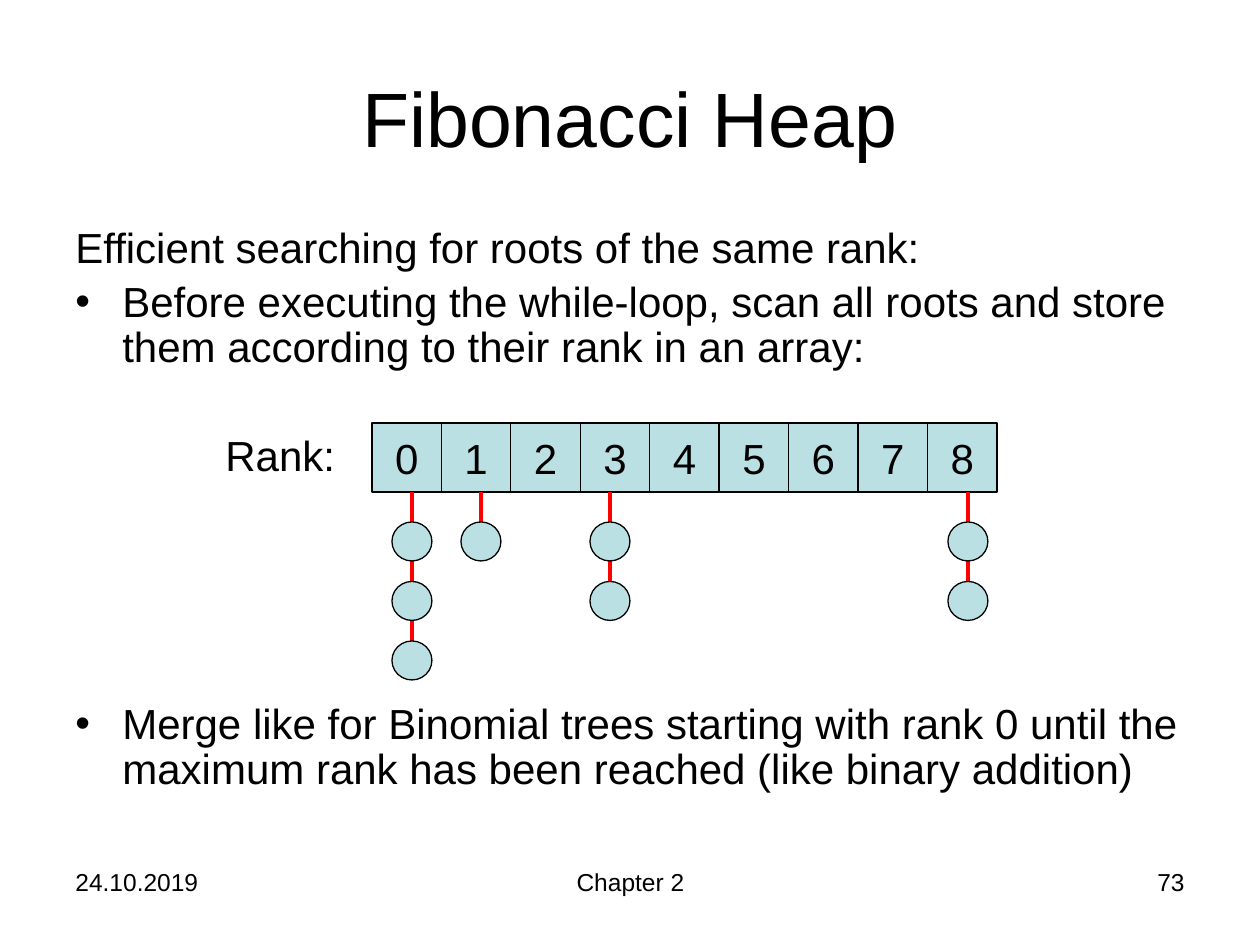
from pptx import Presentation
from pptx.dml.color import RGBColor
from pptx.enum.shapes import MSO_CONNECTOR, MSO_SHAPE
from pptx.enum.text import MSO_ANCHOR, PP_ALIGN
from pptx.oxml.ns import qn
from pptx.util import Pt
from lxml.etree import SubElement

BLACK = RGBColor(0x00, 0x00, 0x00)
TEAL = RGBColor(0xBB, 0xE0, 0xE3)
RED = RGBColor(0xFF, 0x00, 0x00)

TITLE = "Fibonacci Heap"
BODY = [
    ("Efficient searching for roots of the same rank:", False, 5),
    ("Before executing the while-loop, scan all roots and store them "
     "according to their rank in an array:", True, 5),
    ("Merge like for Binomial trees starting with rank 0 until the maximum "
     "rank has been reached (like binary addition)", True, 189),
]
FOOTER = [
    ("24.10.2019", 63, 294, PP_ALIGN.LEFT),
    ("Chapter 2", 431, 399, PP_ALIGN.CENTER),
    ("73", 903, 294, PP_ALIGN.RIGHT),
]
RANKS = range(9)
ROOTS = [(412, 3), (481, 1), (610, 2), (968, 2)]

ARRAY_LEFT, ARRAY_TOP, ARRAY_WIDTH, CELL_HEIGHT = 372, 423, 625, 69
NODE_TOP, NODE_W, NODE_H, TWO_NODE_STEPS = 522, 40, 39, 119
INDENT = 47


def px(n):
    return round(n * 914400 / 126)


def add_run(p, text, size):
    r = p.add_run()
    r.text = text
    r.font.name, r.font.size, r.font.color.rgb = "Arial", Pt(size), BLACK


def add_text(s, text, box, size, align=PP_ALIGN.LEFT, anchor=MSO_ANCHOR.TOP, wrap=True):
    tf = s.shapes.add_textbox(*map(px, box)).text_frame
    tf.word_wrap, tf.vertical_anchor = wrap, anchor
    tf.paragraphs[0].alignment = align
    add_run(tf.paragraphs[0], text, size)


def add_body(s):
    tf = s.shapes.add_textbox(*map(px, (63, 221, 1134, 624))).text_frame
    tf.word_wrap = True
    for i, (text, bullet, before) in enumerate(BODY):
        p = tf.add_paragraph() if i else tf.paragraphs[0]
        p.line_spacing, p.space_before = 0.9, Pt(before)
        add_run(p, text, 24)
        pPr = p._p.get_or_add_pPr()
        pPr.set("marL", str(px(INDENT)))
        pPr.set("indent", str(-px(INDENT)))
        if bullet:
            SubElement(pPr, qn("a:buFont")).set("typeface", "Arial")
            SubElement(pPr, qn("a:buChar")).set("char", "•")


def add_box(s, kind, box):
    sp = s.shapes.add_shape(kind, *map(px, box))
    sp.shadow.inherit = False
    sp.fill.solid()
    sp.fill.fore_color.rgb = TEAL
    sp.line.color.rgb, sp.line.width = BLACK, Pt(0.75)
    return sp


def add_array(s):
    cell = ARRAY_WIDTH / len(RANKS)
    for i, rank in enumerate(RANKS):
        sp = add_box(s, MSO_SHAPE.RECTANGLE,
                     (ARRAY_LEFT + i * cell, ARRAY_TOP, cell, CELL_HEIGHT))
        tf = sp.text_frame
        tf.word_wrap, tf.vertical_anchor = False, MSO_ANCHOR.MIDDLE
        tf.paragraphs[0].alignment = PP_ALIGN.CENTER
        add_run(tf.paragraphs[0], str(rank), 24)


def add_root_list(s, x, count):
    tops = [NODE_TOP + k * TWO_NODE_STEPS / 2 for k in range(count)]
    line = s.shapes.add_connector(MSO_CONNECTOR.STRAIGHT, px(x), px(ARRAY_TOP + CELL_HEIGHT),
                                  px(x), px(tops[-1]))
    line.line.color.rgb, line.line.width = RED, Pt(2.25)
    SubElement(line._element.spPr, qn("a:effectLst"))
    for top in tops:
        add_box(s, MSO_SHAPE.OVAL, (x - NODE_W / 2, top, NODE_W, NODE_H))


def main():
    """Build the Fibonacci heap slide with its array of roots by rank."""
    prs = Presentation()
    prs.slide_width, prs.slide_height = px(1260), px(945)
    s = prs.slides.add_slide(prs.slide_layouts[6])
    for text, left, width, align in FOOTER:
        add_text(s, text, (left, 861, width, 66), 14, align)
    add_text(s, TITLE, (63, 38, 1134, 157), 44, PP_ALIGN.CENTER, MSO_ANCHOR.MIDDLE)
    add_body(s)
    add_array(s)
    add_text(s, "Rank:", (213, 423, 136, 63), 24, wrap=False)
    for x, count in ROOTS:
        add_root_list(s, x, count)
    prs.save("out.pptx")


if __name__ == "__main__":
    main()
